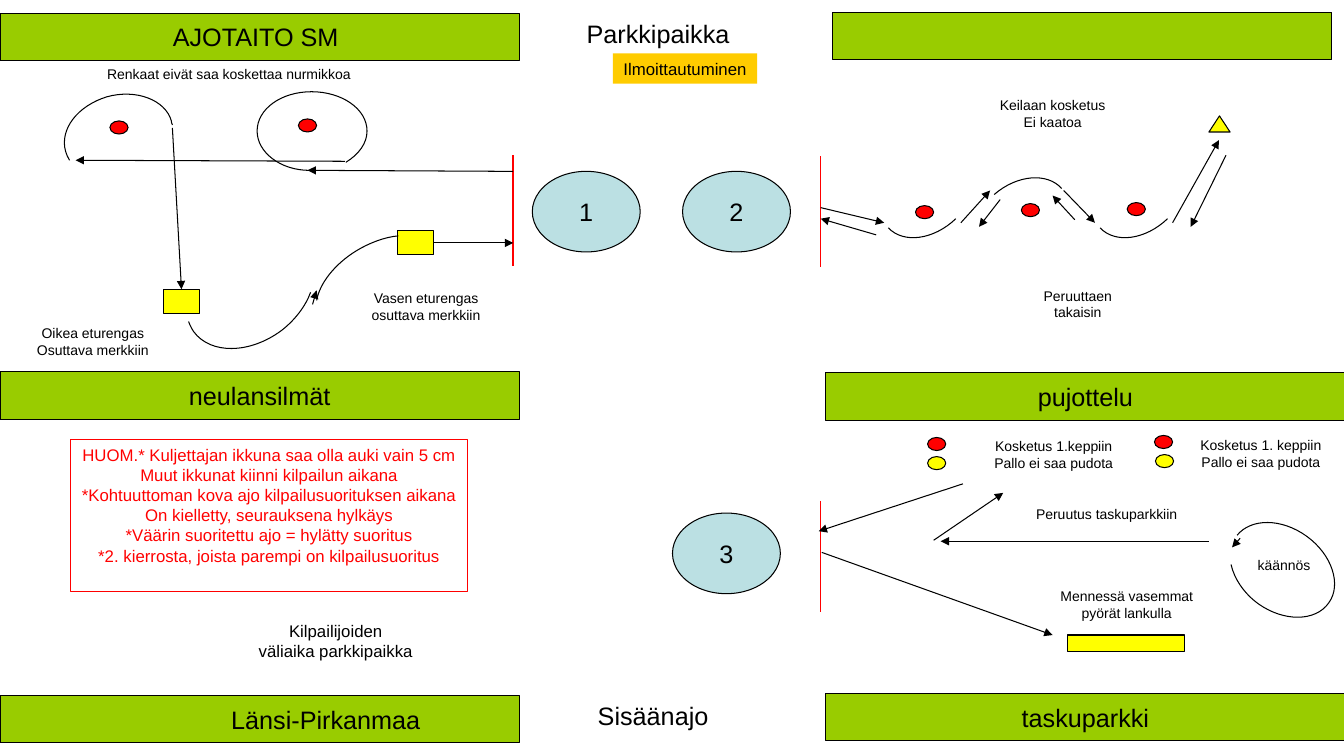
import math
from dataclasses import dataclass
from typing import Optional

import lxml.etree
import pptx
import pptx.dml.color
import pptx.enum.shapes
import pptx.enum.text
import pptx.oxml.ns
import pptx.util

Inches = pptx.util.Inches
Kind = pptx.enum.shapes.MSO_SHAPE
Align = pptx.enum.text.PP_ALIGN
Anchor = pptx.enum.text.MSO_ANCHOR
Point = tuple[float, float]


@dataclass(frozen=True)
class Theme:
    font: str = "Arial"
    black: str = "000000"
    red: str = "FF0000"
    green: str = "99CC00"
    yellow: str = "FFFF00"
    orange: str = "FFCC00"
    blue: str = "BBE0E3"
    large: float = 18
    mid: float = 12
    small: float = 10
    thin: float = 0.75
    thick: float = 1


THEME = Theme()


@dataclass(frozen=True)
class Label:
    x: float
    y: float
    w: float
    h: float
    text: str
    size: float = THEME.small
    align: Align = Align.CENTER


@dataclass(frozen=True)
class Box:
    x: float
    y: float
    w: float
    h: float
    fill: Optional[str]
    kind: Kind = Kind.RECTANGLE
    text: str = ""
    size: float = THEME.large
    ink: str = THEME.black
    edge: Optional[str] = THEME.black
    anchor: Anchor = Anchor.MIDDLE
    inset: float = 0.1


@dataclass(frozen=True)
class Line:
    start: Point
    end: Point
    color: str = THEME.black
    width: float = THEME.thin
    head: bool = True
    source: Optional[Box] = None  # joined at its right side
    target: Optional[Box] = None  # joined at its top side


@dataclass(frozen=True)
class Curve:
    frame: tuple[float, float, float, float]
    turn: float
    knots: list[Point]  # a start, then two handles and an end for each part


def band(x: float, y: float, text: str, w: float = 5.15, inset: float = 0.1) -> Box:
    return Box(x, y, w, 0.47, THEME.green, text=text, inset=inset)


def station(x: float, y: float, text: str) -> Box:
    return Box(x, y, 1.07, 0.8, THEME.blue, Kind.OVAL, text)


def dot(x: float, y: float, fill: str = THEME.red) -> Box:
    return Box(x, y, 0.18, 0.13, fill, Kind.OVAL)


def dip(shift: float) -> Curve:
    knots = [(9.48, 2.17), (9.26, 2.38), (8.96, 2.42), (8.81, 2.26)]
    return Curve((8.87 + shift, 2.02, 0.55, 0.39), 136, [(x + shift, y) for x, y in knots])


NOTICE = """HUOM.* Kuljettajan ikkuna saa olla auki vain 5 cm
Muut ikkunat kiinni kilpailun aikana
*Kohtuuttoman kova ajo kilpailusuorituksen aikana
On kielletty, seurauksena hylkäys
*Väärin suoritettu ajo = hylätty suoritus
*2. kierrosta, joista parempi on kilpailusuoritus"""

# Marks that the right front and left front tyres must hit
RIGHT_MARK = Box(1.62, 2.87, 0.36, 0.24, THEME.yellow)
LEFT_MARK = Box(3.94, 2.29, 0.36, 0.24, THEME.yellow)

BOXES = [
    # Heading bands
    band(0, 0.13, "AJOTAITO SM", inset=0.02),
    band(0, 3.69, "neulansilmät"),
    band(0, 6.9, "Länsi-Pirkanmaa", inset=1.41),
    band(8.26, 0.12, "", w=4.95),
    band(8.19, 3.7, "pujottelu"),
    band(8.19, 6.88, "taskuparkki"),
    # Sign-up desk and rules
    Box(6.08, 0.53, 1.43, 0.3, THEME.orange, text="Ilmoittautuminen",
        size=THEME.mid, edge=None, anchor=Anchor.TOP),
    Box(0.7, 4.36, 3.94, 1.51, None, text=NOTICE, size=THEME.mid,
        ink=THEME.red, edge=THEME.red, anchor=Anchor.TOP),
    # Stations
    station(5.28, 1.7, "1"), station(6.77, 1.7, "2"), station(6.67, 5.09, "3"),
    # Needle eyes and slalom pins
    dot(1.09, 1.2), dot(2.96, 1.18),
    dot(9.08, 2.04), dot(10.13, 2.02), dot(11.18, 2.01),
    Box(11.99, 1.15, 0.21, 0.16, THEME.yellow, Kind.FLOWCHART_EXTRACT),
    # Pocket parking sticks, balls and plank
    dot(9.2, 4.34), dot(9.2, 4.53, THEME.yellow),
    dot(11.45, 4.32), dot(11.46, 4.51, THEME.yellow),
    Box(10.59, 6.3, 1.16, 0.16, THEME.yellow),
    RIGHT_MARK, LEFT_MARK,
]

LABELS = [
    Label(5.72, 0.13, 1.63, 0.4, "Parkkipaikka", THEME.large, Align.LEFT),
    Label(5.83, 6.9, 1.31, 0.4, "Sisäänajo", THEME.large, Align.LEFT),
    Label(0.95, 0.6, 2.64, 0.27, "Renkaat eivät saa koskettaa nurmikkoa"),
    Label(0.26, 3.17, 1.32, 0.44, "Oikea eturengas\nOsuttava merkkiin"),
    Label(3.58, 2.82, 1.29, 0.44, "Vasen eturengas\nosuttava merkkiin"),
    Label(2.46, 6.11, 1.74, 0.5, "Kilpailijoiden\nväliaika parkkipaikka", THEME.mid),
    Label(9.81, 0.91, 1.26, 0.44, "Keilaan kosketus\nEi kaatoa"),
    Label(10.25, 2.8, 0.88, 0.44, "Peruuttaen\ntakaisin"),
    Label(9.52, 4.29, 1.86, 0.44, "Kosketus 1.keppiin\nPallo ei saa pudota"),
    Label(11.8, 4.28, 1.41, 0.44, "Kosketus 1. keppiin\nPallo ei saa pudota"),
    Label(10.17, 4.97, 1.61, 0.27, "Peruutus taskuparkkiin"),
    Label(10.41, 5.78, 1.53, 0.44, "Mennessä vasemmat\vpyörät lankulla"),
    Label(12.37, 5.47, 0.73, 0.27, "käännös"),
]

# Start lines, each 1.1 tall
LINES = [Line((x, y), (x, y + 1.1), THEME.red, THEME.thick, head=False)
         for x, y in ((5.09, 1.54), (8.14, 1.55), (8.14, 4.97))]
LINES += [
    # Needle eyes
    Line((5.09, 1.7), (3.05, 1.69)),
    Line((3.42, 1.6), (0.75, 1.59)),
    Line((1.71, 1.27), (1.8, 2.87), target=RIGHT_MARK),
    Line((3.1, 3.02), (3.14, 2.88)),
    Line((4.3, 2.41), (5.09, 2.41), source=LEFT_MARK),
    # Slalom, out and back
    Line((8.14, 2.06), (8.77, 2.21)),
    Line((9.53, 2.21), (9.82, 1.89)),
    Line((10.55, 1.89), (10.86, 2.21)),
    Line((11.63, 2.21), (12.09, 1.39)),
    Line((12.16, 1.54), (11.81, 2.25)),
    Line((10.66, 2.18), (10.44, 1.94)),
    Line((9.92, 1.98), (9.71, 2.25)),
    Line((8.69, 2.33), (8.14, 2.17)),
    # Pocket parking
    Line((8.15, 5.48), (10.44, 6.3)),
    Line((12.3, 5.34), (12.22, 5.43)),
    Line((11.99, 5.37), (9.33, 5.37)),
    Line((9.26, 5.36), (9.95, 4.89)),
    Line((9.55, 4.8), (8.12, 5.27)),
]

# Slalom bends, then needle eyes, then the turn
CURVES = [
    dip(0), dip(2.1),
    Curve((9.92, 1.7, 0.55, 0.39), 319.4, [(9.86, 1.93), (10.09, 1.73), (10.39, 1.71), (10.53, 1.87)]),
    Curve((0.59, 0.95, 1.09, 0.5), 164.1, [
        (0.69, 1.59), (0.67, 1.56), (0.66, 1.53), (0.65, 1.5), (0.59, 1.28), (0.77, 1.05), (1.06, 0.96),
        (1.35, 0.88), (1.64, 0.99), (1.7, 1.2), (1.7, 1.21), (1.7, 1.22), (1.71, 1.24)]),
    Curve((2.55, 0.91, 1.09, 0.79), 180, [
        (3.07, 1.69), (2.78, 1.69), (2.55, 1.51), (2.55, 1.3), (2.55, 1.08), (2.79, 0.91), (3.09, 0.91),
        (3.39, 0.91), (3.64, 1.08), (3.64, 1.3), (3.64, 1.42), (3.56, 1.53), (3.43, 1.61)]),
    Curve((1.92, 2.78, 1.16, 0.63), 143, [
        (3.08, 2.9), (3.03, 3.04), (2.92, 3.18), (2.79, 3.28), (2.48, 3.51), (2.09, 3.52),
        (1.92, 3.29), (1.9, 3.26), (1.88, 3.22), (1.87, 3.19)]),
    Curve((3.06, 2.5, 1.03, 0.4), 147.6, [
        (3.14, 2.98), (3.17, 2.81), (3.32, 2.62), (3.53, 2.49), (3.66, 2.41), (3.82, 2.35), (3.95, 2.34)]),
    Curve((12.31, 5.09, 0.82, 1.13), 305.6, [
        (12.27, 5.31), (12.41, 5.14), (12.71, 5.14), (12.96, 5.32), (13.21, 5.5), (13.31, 5.8), (13.18, 5.98),
        (13.05, 6.17), (12.73, 6.17), (12.48, 5.99), (12.34, 5.89), (12.24, 5.74), (12.21, 5.6)]),
]


def paint(line, color: str, width: float) -> None:
    line.color.rgb = pptx.dml.color.RGBColor.from_string(color)
    line.width = pptx.util.Pt(width)


def write(shape, text: str, size: float, ink: str, align: Align) -> None:
    shape.text_frame.text = text
    for para in shape.text_frame.paragraphs:
        para.alignment = align
        para.font.name, para.font.size = THEME.font, pptx.util.Pt(size)
        para.font.color.rgb = pptx.dml.color.RGBColor.from_string(ink)


def draw_box(slide, box: Box):
    shape = slide.shapes.add_shape(box.kind, *map(Inches, (box.x, box.y, box.w, box.h)))
    shape.shadow.inherit = False
    if box.fill:
        shape.fill.solid()
        shape.fill.fore_color.rgb = pptx.dml.color.RGBColor.from_string(box.fill)
    else:
        shape.fill.background()
    if box.edge:
        paint(shape.line, box.edge, THEME.thin)
    else:
        shape.line.fill.background()
    if box.text:
        frame = shape.text_frame
        frame.word_wrap, frame.vertical_anchor = False, box.anchor
        frame.margin_left = Inches(box.inset)
        write(shape, box.text, box.size, box.ink, Align.CENTER)
    return shape


def draw_label(slide, label: Label) -> None:
    shape = slide.shapes.add_textbox(*map(Inches, (label.x, label.y, label.w, label.h)))
    shape.text_frame.word_wrap = False
    write(shape, label.text, label.size, THEME.black, label.align)


def draw_line(slide, line: Line, drawn: dict) -> None:
    link = slide.shapes.add_connector(pptx.enum.shapes.MSO_CONNECTOR.STRAIGHT,
                                      *map(Inches, line.start + line.end))
    paint(link.line, line.color, line.width)
    if line.head:
        lxml.etree.SubElement(link.line._get_or_add_ln(), pptx.oxml.ns.qn("a:tailEnd"), type="triangle")
    lxml.etree.SubElement(link._element.spPr, pptx.oxml.ns.qn("a:effectLst"))
    if line.source:
        link.begin_connect(drawn[line.source], 3)
    if line.target:
        link.end_connect(drawn[line.target], 0)


def draw_curve(slide, curve: Curve) -> None:
    # Turn the knots back into the frame, which is then rotated
    x, y, w, h = curve.frame
    cos, sin = math.cos(math.radians(curve.turn)), math.sin(math.radians(curve.turn))
    gaps = [(px - x - w / 2, py - y - h / 2) for px, py in curve.knots]
    spots = [(Inches(w / 2 + dx * cos + dy * sin), Inches(h / 2 - dx * sin + dy * cos)) for dx, dy in gaps]
    pen = slide.shapes.build_freeform(*spots[0])
    pen.add_line_segments(spots[1:], close=False)
    shape = pen.convert_to_shape()
    shape.left, shape.top, shape.width, shape.height = map(Inches, curve.frame)
    shape.rotation = curve.turn
    # Fold each three straight steps into one Bezier part
    trace = shape._element.find(".//" + pptx.oxml.ns.qn("a:path"))
    trace.set("w", str(Inches(w)))
    trace.set("h", str(Inches(h)))
    for step in list(trace)[1:]:
        trace.remove(step)
    for i in range(1, len(spots), 3):
        bend = lxml.etree.SubElement(trace, pptx.oxml.ns.qn("a:cubicBezTo"))
        for _ in range(3):
            lxml.etree.SubElement(bend, pptx.oxml.ns.qn("a:pt"))
    for dot_tag, (sx, sy) in zip(trace.iter(pptx.oxml.ns.qn("a:pt")), spots):
        dot_tag.set("x", str(int(sx)))
        dot_tag.set("y", str(int(sy)))
    shape.shadow.inherit = False
    shape.fill.background()
    paint(shape.line, THEME.black, THEME.thin)


def main() -> None:
    deck = pptx.Presentation()
    deck.slide_width, deck.slide_height = Inches(13.33), Inches(7.5)
    slide = deck.slides.add_slide(deck.slide_layouts[6])
    drawn = {box: draw_box(slide, box) for box in BOXES}
    for line in LINES:
        draw_line(slide, line, drawn)
    for curve in CURVES:
        draw_curve(slide, curve)
    for label in LABELS:
        draw_label(slide, label)
    deck.save("out.pptx")


if __name__ == "__main__":
    main()
